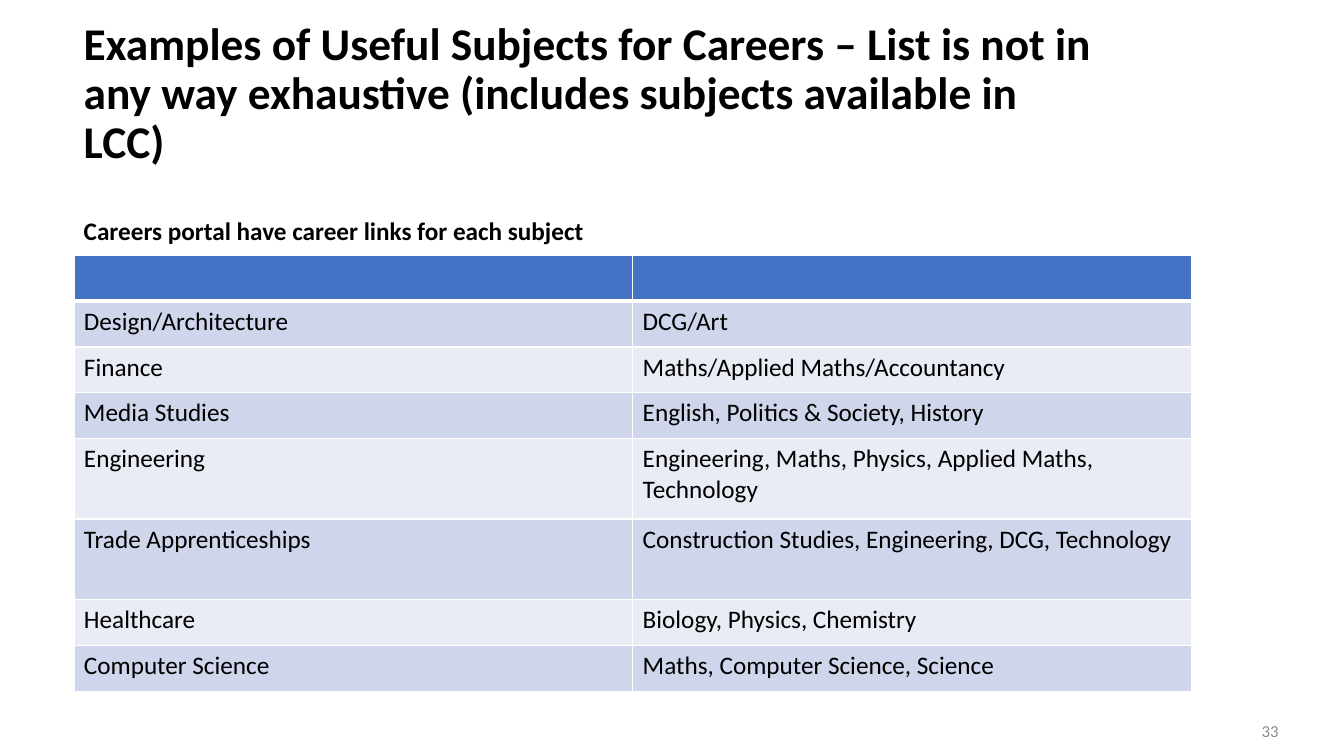
import dataclasses

import pptx
import pptx.dml.color
import pptx.enum.text
import pptx.oxml
import pptx.oxml.ns
import pptx.util


@dataclasses.dataclass(frozen=True)
class Theme:
    font: str = "Calibri"
    ink: str = "000000"
    muted: str = "8C8C8C"
    header: str = "4472C4"
    bands: tuple = ("CFD5EA", "E9EBF5")
    border: str = "FFFFFF"
    title_size: float = 32.4
    body_size: float = 18
    number_size: float = 12
    title_spacing: float = 0.9
    caption_gap: float = 35.6
    thin: float = 1
    thick: float = 3


def rgb(code):
    return pptx.dml.color.RGBColor.from_string(code)


class SlideBuilder:
    """Places elements by percent of the slide's width and height."""

    def __init__(self, deck, theme):
        self.deck = deck
        self.theme = theme
        self.page = deck.slides.add_slide(deck.slide_layouts[5])

    def across(self, share):
        return round(self.deck.slide_width * share / 100)

    def down(self, share):
        return round(self.deck.slide_height * share / 100)

    def area(self, left, top, width, height):
        return self.across(left), self.down(top), self.across(width), self.down(height)

    def style(self, para, size, color, bold=False):
        para.font.name = self.theme.font
        para.font.size = pptx.util.Pt(size)
        para.font.bold = bold
        para.font.color.rgb = rgb(color)

    def frame(self, box):
        box.text_frame.word_wrap = True
        box.text_frame.auto_size = pptx.enum.text.MSO_AUTO_SIZE.NONE
        box.text_frame.vertical_anchor = pptx.enum.text.MSO_ANCHOR.MIDDLE
        return box.text_frame

    def title(self, heading, caption, *place):
        box = self.page.shapes.title
        box.left, box.top, box.width, box.height = self.area(*place)
        frame = self.frame(box)
        frame.text = f"{heading}\n{caption}"
        sizes = (self.theme.title_size, self.theme.body_size)
        for para, size in zip(frame.paragraphs, sizes):
            para.alignment = pptx.enum.text.PP_ALIGN.LEFT
            para.line_spacing = self.theme.title_spacing
            para.space_before = pptx.util.Pt(0)
            self.style(para, size, self.theme.ink, bold=True)
        frame.paragraphs[1].space_before = pptx.util.Pt(self.theme.caption_gap)

    def number(self, text, *place):
        frame = self.frame(self.page.shapes.add_textbox(*self.area(*place)))
        para = frame.paragraphs[0]
        para.text = text
        para.alignment = pptx.enum.text.PP_ALIGN.RIGHT
        self.style(para, self.theme.number_size, self.theme.muted)

    def borders(self, cell, widths):
        properties = cell._tc.get_or_add_tcPr()
        for side, width in widths.items():
            properties.append(pptx.oxml.parse_xml(
                f'<a:ln{side} {pptx.oxml.ns.nsdecls("a")} w="{pptx.util.Pt(width)}">'
                f'<a:solidFill><a:srgbClr val="{self.theme.border}"/></a:solidFill>'
                f'</a:ln{side}>'))

    def table(self, rows, heights, *place):
        grid = self.page.shapes.add_table(
            len(rows), len(rows[0]), *self.area(*place, sum(heights))).table
        for index, (texts, height) in enumerate(zip(rows, heights)):
            grid.rows[index].height = self.down(height)
            fill = self.theme.bands[(index - 1) % 2] if index else self.theme.header
            widths = dict.fromkeys("LRTB", self.theme.thin)
            if index == 0:
                widths["B"] = self.theme.thick
            elif index == 1:
                widths["T"] = self.theme.thick
            for cell, text in zip(grid.rows[index].cells, texts):
                cell.text = text
                self.style(cell.text_frame.paragraphs[0],
                           self.theme.body_size, self.theme.ink)
                self.borders(cell, widths)
                cell.fill.solid()
                cell.fill.fore_color.rgb = rgb(fill)


CAREER_SUBJECTS = [
    ("", ""),
    ("Design/Architecture", "DCG/Art"),
    ("Finance", "Maths/Applied Maths/Accountancy"),
    ("Media Studies", "English, Politics & Society, History"),
    ("Engineering", "Engineering, Maths, Physics, Applied Maths, Technology"),
    ("Trade Apprenticeships", "Construction Studies, Engineering, DCG, Technology"),
    ("Healthcare", "Biology, Physics, Chemistry"),
    ("Computer Science", "Maths, Computer Science, Science"),
]
SINGLE, DOUBLE = 6.05, 10.67
ROW_HEIGHTS = [SINGLE] * 4 + [DOUBLE] * 2 + [SINGLE] * 2


def main():
    deck = pptx.Presentation()
    deck.slide_width = pptx.util.Inches(13.33)
    deck.slide_height = pptx.util.Inches(7.5)
    slide = SlideBuilder(deck, Theme())

    # Title with its caption
    slide.title(
        "Examples of Useful Subjects for Careers – List is not in any way "
        "exhaustive (includes subjects available in LCC)",
        "Careers portal have career links for each subject",
        5.48, 10.4, 76.67, 14.53)

    # Page number
    slide.number("33", 80.87, 93.33, 15, 6.67)

    # Careers and their subjects
    slide.table(CAREER_SUBJECTS, ROW_HEIGHTS, 5.5, 33.8, 83.15)

    deck.save("out.pptx")


if __name__ == "__main__":
    main()
